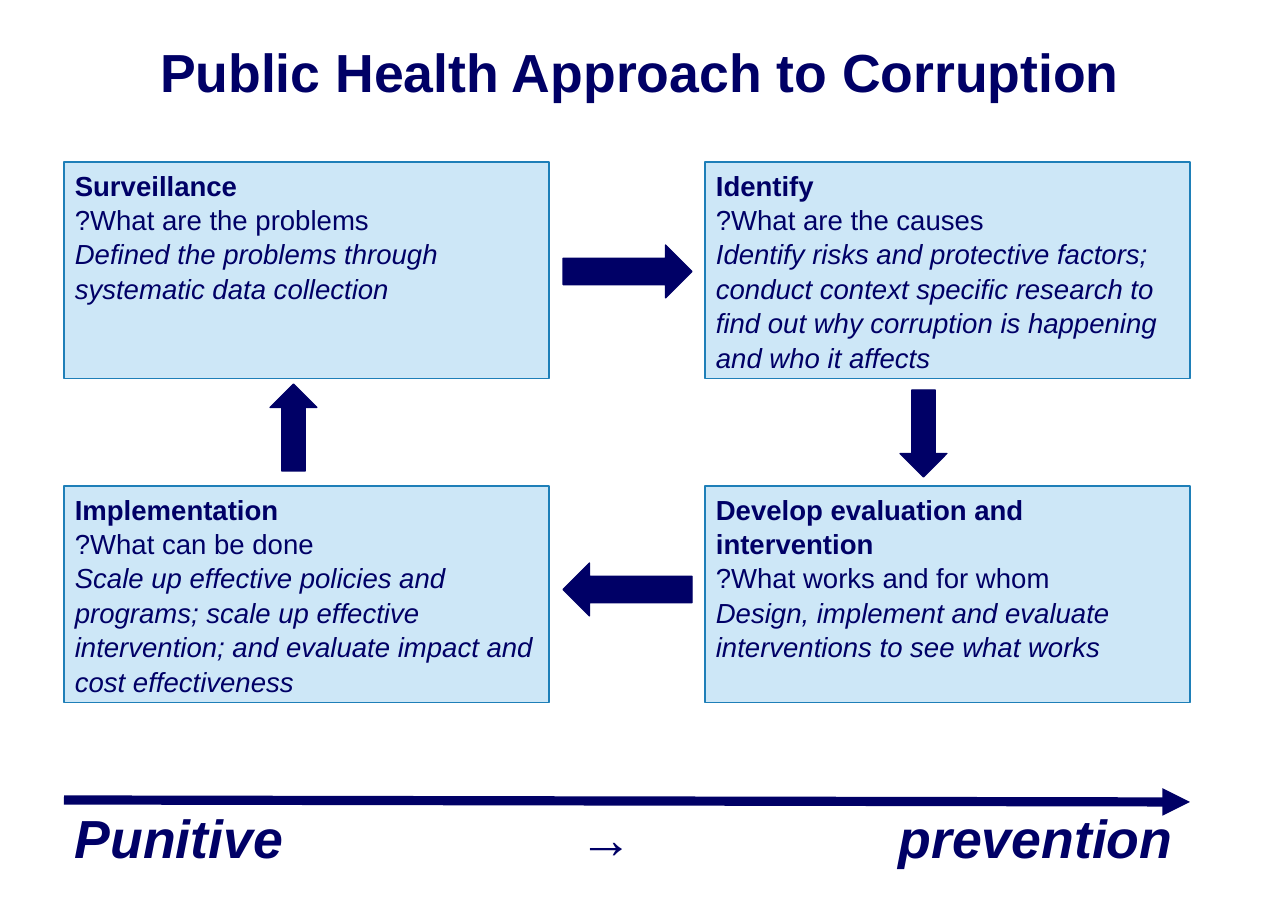
from lxml import etree
from pptx import Presentation
from pptx.dml.color import RGBColor
from pptx.enum.shapes import MSO_CONNECTOR, MSO_SHAPE
from pptx.enum.text import MSO_ANCHOR, PP_ALIGN
from pptx.oxml.ns import qn
from pptx.util import Emu, Pt

EMU_PER_PX = 914400 / 110.2
NAVY = RGBColor(0x00, 0x00, 0x66)
PALE_BLUE = RGBColor(0xCD, 0xE7, 0xF7)
EDGE_BLUE = RGBColor(0x1E, 0x7F, 0xB8)
RECT, RIGHT_ARROW = MSO_SHAPE.RECTANGLE, MSO_SHAPE.RIGHT_ARROW
STRAIGHT = MSO_CONNECTOR.STRAIGHT
LEFT, TOP = PP_ALIGN.LEFT, MSO_ANCHOR.TOP

TITLE_ONLY = 5
COLUMNS, ROWS = (64, 705), (162, 486)
STAGE_W, STAGE_H = 485, 217

# Column, row, heading, question, description
STAGES = [
    (0, 0, "Surveillance", "?What are the problems",
     "Defined the problems through systematic data collection"),
    (1, 0, "Identify", "?What are the causes",
     "Identify risks and protective factors; conduct context specific research "
     "to find out why corruption is happening and who it affects"),
    (0, 1, "Implementation", "?What can be done",
     "Scale up effective policies and programs; scale up effective "
     "intervention; and evaluate impact and cost effectiveness"),
    (1, 1, "Develop evaluation and intervention", "?What works and for whom",
     "Design, implement and evaluate interventions to see what works"),
]

# Left, top, width, height, rotation
CYCLE_ARROWS = [
    (563, 245, 129, 53, 0),
    (880, 410, 87, 47, 90),
    (563, 563, 129, 53, 180),
    (250, 404, 87, 47, 270),
]


def px(n):
    return Emu(round(n * EMU_PER_PX))


def set_font(p, size, bold=False, italic=False):
    p.alignment = LEFT
    f = p.font
    f.name, f.size, f.bold, f.italic = "Arial", Pt(size), bold, italic
    f.color.rgb = NAVY


def add_title(s, text, x, y, w, h):
    sp = s.shapes.title
    sp.left, sp.top, sp.width, sp.height = px(x), px(y), px(w), px(h)
    tf = sp.text_frame
    tf.text = text
    tf.word_wrap = True
    tf.vertical_anchor = TOP
    set_font(tf.paragraphs[0], 35, bold=True)


def add_filled_shape(s, kind, x, y, w, h, fill, edge):
    sp = s.shapes.add_shape(kind, px(x), px(y), px(w), px(h))
    sp.shadow.inherit = False
    sp.fill.solid()
    sp.fill.fore_color.rgb = fill
    sp.line.color.rgb = edge
    sp.line.width = Pt(0.75)
    return sp


def add_stage(s, col, row, heading, question, description):
    sp = add_filled_shape(s, RECT, COLUMNS[col], ROWS[row],
                          STAGE_W, STAGE_H, PALE_BLUE, EDGE_BLUE)
    tf = sp.text_frame
    tf.word_wrap = True
    tf.vertical_anchor = TOP
    tf.text = "\n".join((heading, question, description))
    for i, p in enumerate(tf.paragraphs):
        p.line_spacing = 1.04
        set_font(p, 18, bold=i == 0, italic=i == 2)


def add_scale_line(s, x1, y1, x2, y2):
    line = s.shapes.add_connector(STRAIGHT, px(x1), px(y1), px(x2), px(y2))
    line.line.color.rgb = NAVY
    line.line.width = Pt(6)
    etree.SubElement(line.line._get_or_add_ln(), qn("a:tailEnd"), type="triangle")
    etree.SubElement(line._element.spPr, qn("a:effectLst"))


def add_scale_label(s, text, x, y, w, h, tabs):
    tf = s.shapes.add_textbox(px(x), px(y), px(w), px(h)).text_frame
    tf.word_wrap = True
    p = tf.paragraphs[0]
    p.text = text
    tab_list = etree.SubElement(p._p.get_or_add_pPr(), qn("a:tabLst"))
    for pos, align in tabs:
        etree.SubElement(tab_list, qn("a:tab"), pos=str(px(pos)), algn=align)
    set_font(p, 35, bold=True, italic=True)


def main():
    prs = Presentation()
    prs.slide_width, prs.slide_height = px(1288), px(911)
    s = prs.slides.add_slide(prs.slide_layouts[TITLE_ONLY])

    add_title(s, "Public Health Approach to Corruption", 149, 33, 991, 76)

    # Four stages and the cycle between them
    for stage in STAGES:
        add_stage(s, *stage)
    for x, y, w, h, rotation in CYCLE_ARROWS:
        arrow = add_filled_shape(s, RIGHT_ARROW, x, y, w, h, NAVY, NAVY)
        arrow.rotation = rotation

    # Scale from punishment to prevention
    add_scale_label(s, "Punitive\t→\tprevention", 64, 800, 1150, 76,
                    [(532, "ctr"), (1098, "r")])
    add_scale_line(s, 64, 800, 1190, 802)

    prs.save("out.pptx")


if __name__ == "__main__":
    main()
